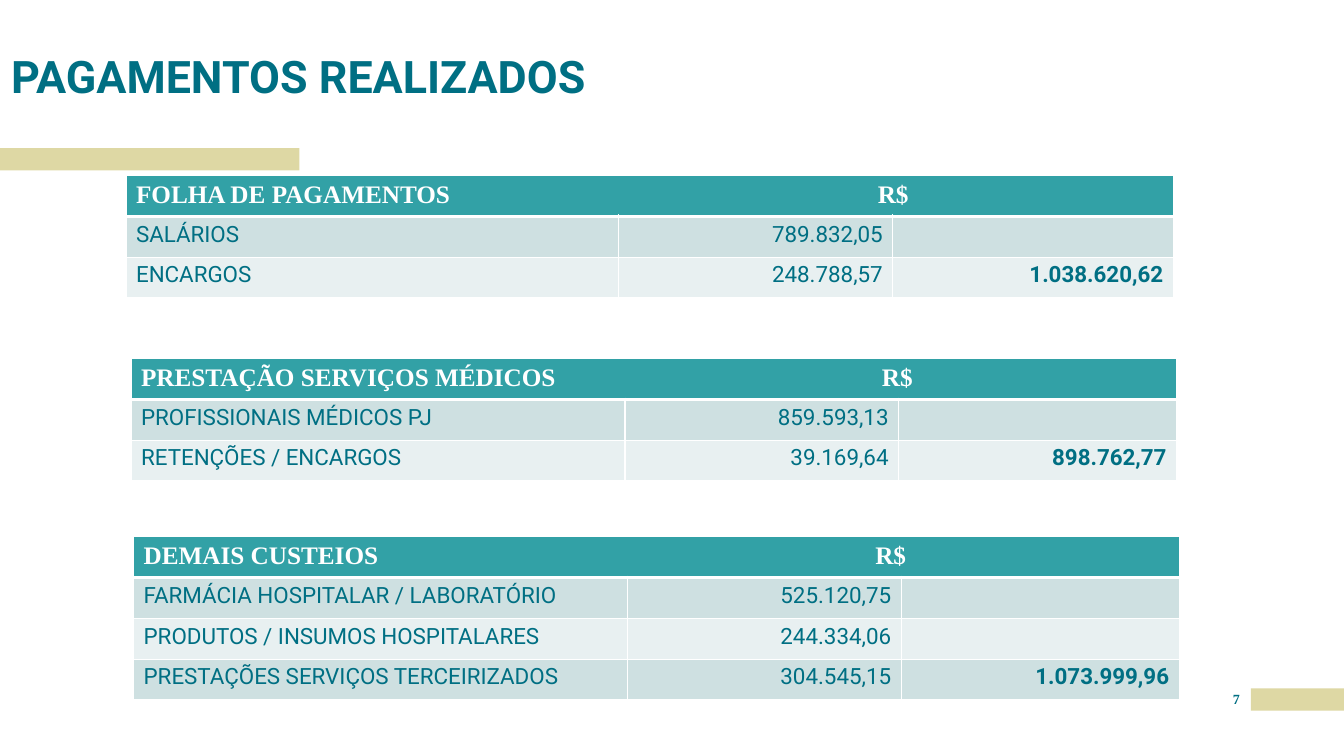
from lxml import etree
from pptx import Presentation
from pptx.dml.color import RGBColor
from pptx.enum.shapes import MSO_SHAPE
from pptx.enum.text import MSO_ANCHOR, PP_ALIGN
from pptx.oxml.ns import qn
from pptx.util import Inches, Pt

LEFT, CENTER, RIGHT = PP_ALIGN.LEFT, PP_ALIGN.CENTER, PP_ALIGN.RIGHT
BOTTOM, TOP = MSO_ANCHOR.BOTTOM, MSO_ANCHOR.TOP
RECTANGLE = MSO_SHAPE.RECTANGLE

# Grid of square units over the whole slide
COLUMNS, ROWS = 160, 90
TABLE_ROW = 4.86


def color(value):
    return RGBColor.from_string(value)


def write(frame, text, font="Roboto", size=16, ink="006F83", bold=False,
          align=LEFT, spacing=None):
    para = frame.paragraphs[0]
    para.alignment = align
    if spacing:
        para.line_spacing = spacing
    span = para.add_run()
    span.text = text
    span.font.name = font
    span.font.size = Pt(size)
    span.font.bold = bold
    span.font.color.rgb = color(ink)
    return para


class Report:
    serif = "Times New Roman"
    sand, teal, white = "DED8A4", "32A1A6", "FFFFFF"
    bands = ("CEE0E1", "E8F0F1")

    def __init__(self, deck):
        self.deck = deck
        self.page = deck.slides.add_slide(deck.slide_layouts[5])

    def across(self, columns):
        return round(self.deck.slide_width * columns / COLUMNS)

    def down(self, rows):
        return round(self.deck.slide_height * rows / ROWS)

    def area(self, left, top, width, height):
        return self.across(left), self.down(top), self.across(width), self.down(height)

    def bar(self, *place):
        box = self.page.shapes.add_shape(RECTANGLE, *self.area(*place))
        box.shadow.inherit = False
        box.fill.solid()
        box.fill.fore_color.rgb = color(self.sand)
        box.line.fill.background()

    def bare_frame(self, box, anchor):
        frame = box.text_frame
        frame.margin_left = frame.margin_right = 0
        frame.margin_top = frame.margin_bottom = 0
        frame.word_wrap = True
        frame.vertical_anchor = anchor
        return frame

    def title(self, text, *place):
        box = self.page.shapes.title
        box.left, box.top, box.width, box.height = self.area(*place)
        write(self.bare_frame(box, BOTTOM), text, size=32, bold=True, spacing=0.9)

    def page_number(self, text, *place):
        box = self.page.shapes.add_textbox(*self.area(*place))
        write(self.bare_frame(box, TOP), text, font=self.serif, size=10,
              bold=True, align=CENTER)

    def border(self, cell, side, width):
        line = etree.SubElement(cell._tc.get_or_add_tcPr(), qn("a:ln" + side),
                                w=str(Pt(width)))
        fill = etree.SubElement(line, qn("a:solidFill"))
        etree.SubElement(fill, qn("a:srgbClr"), val=self.white)

    def paint(self, cell, fill, top=1, bottom=1):
        for side, width in (("L", 1), ("R", 1), ("T", top), ("B", bottom)):
            self.border(cell, side, width)
        cell.fill.solid()
        cell.fill.fore_color.rgb = color(fill)

    def heading(self, cell, text, tab):
        para = write(cell.text_frame, text + "\tR$", font=self.serif, size=18,
                     ink=self.white, bold=True)
        stops = etree.SubElement(para._p.get_or_add_pPr(), qn("a:tabLst"))
        etree.SubElement(stops, qn("a:tab"), pos=str(self.across(tab)), algn="l")

    def payments(self, left, top, widths, tab, name, entries, total):
        count = len(entries) + 1
        place = self.area(left, top, sum(widths), TABLE_ROW * count)
        table = self.page.shapes.add_table(count, len(widths), *place).table
        table.first_row = table.horz_banding = False
        for column, width in zip(table.columns, widths):
            column.width = self.across(width)
        for row in table.rows:
            row.height = self.down(TABLE_ROW)

        # Heading across all columns
        for cell in table.rows[0].cells:
            self.paint(cell, self.teal, bottom=3)
        table.cell(0, 0).merge(table.cell(0, len(widths) - 1))
        self.heading(table.cell(0, 0), name, tab)

        # Entries in alternating bands, with the total in the last row
        for index, (label, amount) in enumerate(entries, 1):
            cells = list(table.rows[index].cells)
            for cell in cells:
                self.paint(cell, self.bands[(index - 1) % 2], top=3 if index == 1 else 1)
            write(cells[0].text_frame, label)
            write(cells[1].text_frame, amount, align=RIGHT)
        write(cells[2].text_frame, total, bold=True, align=RIGHT)


def main():
    deck = Presentation()
    deck.slide_width, deck.slide_height = Inches(13.33), Inches(7.5)
    report = Report(deck)

    # Frame of the page
    report.bar(148.92, 81.96, 11.08, 2.64)
    report.bar(0, 17.64, 35.64, 2.64)
    report.title("PAGAMENTOS REALIZADOS", 1.32, 0, 112.08, 12.24)
    report.page_number("7", 145.44, 82.2, 3.48, 3)

    # Payment tables
    report.payments(
        15, 20.9, (58.6, 32.7, 33.4), 88.3, "FOLHA DE PAGAMENTOS",
        [("SALÁRIOS", "789.832,05"), ("ENCARGOS", "248.788,57")],
        "1.038.620,62")
    report.payments(
        15.6, 42.7, (58.8, 32.6, 33.1), 88.2, "PRESTAÇÃO SERVIÇOS MÉDICOS",
        [("PROFISSIONAIS MÉDICOS PJ", "859.593,13"),
         ("RETENÇÕES / ENCARGOS", "39.169,64")],
        "898.762,77")
    report.payments(
        15.9, 63.9, (58.8, 32.6, 33.1), 87.1, "DEMAIS CUSTEIOS",
        [("FARMÁCIA HOSPITALAR / LABORATÓRIO", "525.120,75"),
         ("PRODUTOS / INSUMOS HOSPITALARES", "244.334,06"),
         ("PRESTAÇÕES SERVIÇOS TERCEIRIZADOS", "304.545,15")],
        "1.073.999,96")

    deck.save("out.pptx")


if __name__ == "__main__":
    main()
